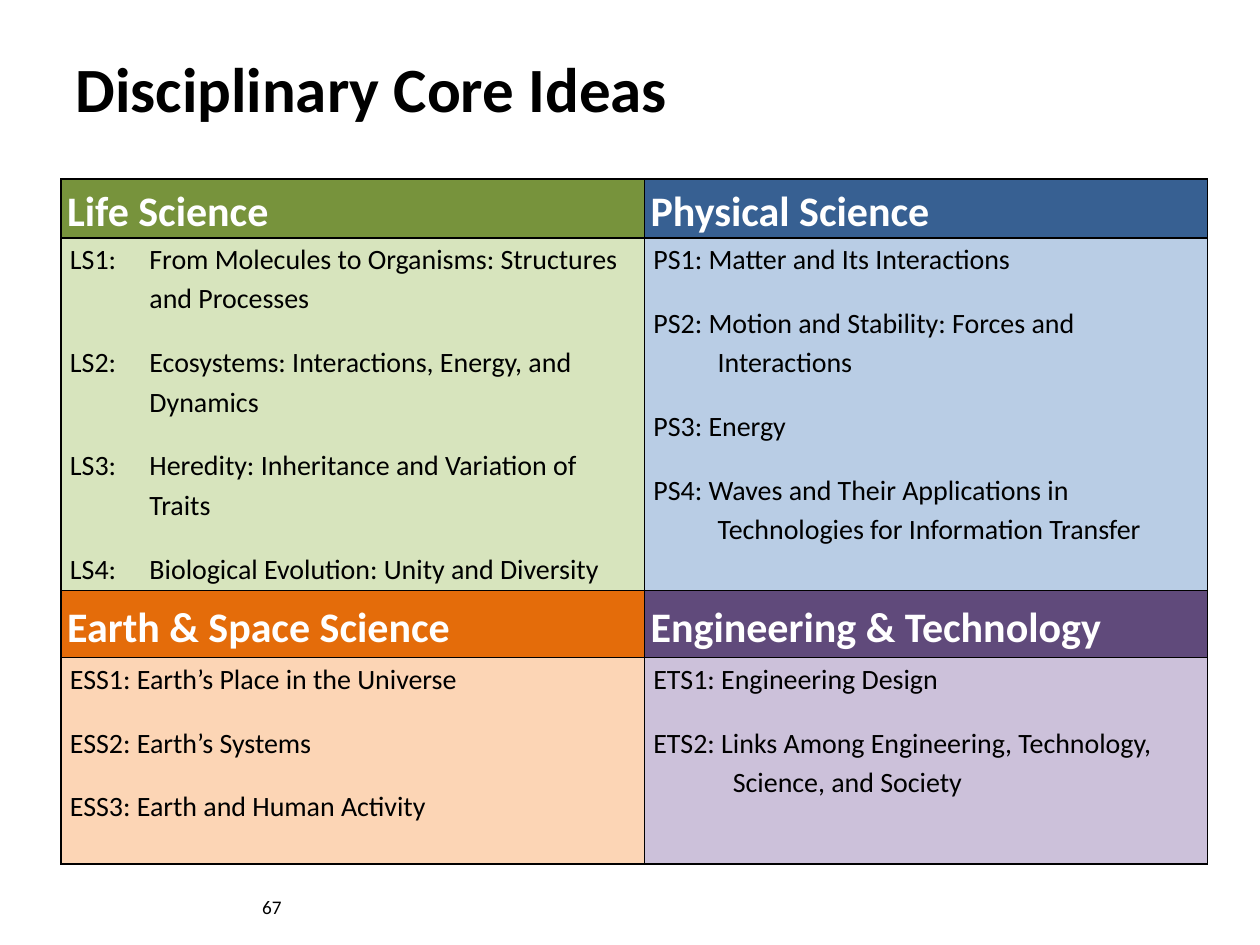
"""Build the slide of disciplinary core ideas as a four-part table."""
import dataclasses
import typing

import pptx
import pptx.dml.color
import pptx.enum.text
import pptx.oxml
import pptx.oxml.ns
import pptx.util

Pt = pptx.util.Pt
Anchor = pptx.enum.text.MSO_ANCHOR
Align = pptx.enum.text.PP_ALIGN

HUES = {
    "black": "000000", "white": "FFFFFF",
    "life": "77933C", "life pale": "D7E4BD",
    "phys": "376092", "phys pale": "B9CDE5",
    "earth": "E46C0A", "earth pale": "FCD5B5",
    "tech": "604A7B", "tech pale": "CCC1DA",
}
FONTS = {
    "title": {"name": "Calibri", "size": Pt(36), "bold": True},
    "head": {"name": "Calibri", "size": Pt(24), "bold": True},
    "item": {"name": "Calibri", "size": Pt(16), "bold": False},
    "page": {"name": "Calibri", "size": Pt(11), "bold": False},
}
HEAD = {"vertical_anchor": Anchor.MIDDLE, "margin_left": Pt(3.6),
        "margin_right": Pt(3.6), "margin_top": 0, "margin_bottom": 0}
BODY = {**HEAD, "vertical_anchor": Anchor.TOP,
        "margin_left": Pt(5.2), "margin_right": Pt(5.2)}
COLS = (333.4, 321.8)
ROWS = (33.1, 201.6, 38.2, 118.1)


@dataclasses.dataclass
class Topic:
    """A field of science with its core ideas."""
    row: int
    col: int
    hue: str
    head: str
    hang: float
    items: list[str]


TOPICS = [
    Topic(0, 0, "life", "Life Science", 45.4, [
        "LS1:\tFrom Molecules to Organisms: Structures and Processes",
        "LS2:\tEcosystems: Interactions, Energy, and Dynamics",
        "LS3:\tHeredity: Inheritance and Variation of Traits",
        "LS4:\tBiological Evolution: Unity and Diversity"]),
    Topic(0, 1, "phys", "Physical Science", 36.7, [
        "PS1: Matter and Its Interactions",
        "PS2: Motion and Stability: Forces and Interactions",
        "PS3: Energy",
        "PS4: Waves and Their Applications in Technologies for "
        "Information Transfer"]),
    Topic(2, 0, "earth", "Earth & Space Science", 30.2, [
        "ESS1: Earth’s Place in the Universe",
        "ESS2: Earth’s Systems",
        "ESS3: Earth and Human Activity"]),
    Topic(2, 1, "tech", "Engineering & Technology", 45.4, [
        "ETS1: Engineering Design",
        "ETS2: Links Among Engineering, Technology, Science, and Society"]),
]


def apply(thing: typing.Any, form: dict[str, typing.Any]) -> None:
    """Set each attribute in the dict."""
    for key, val in form.items():
        setattr(thing, key, val)


def tint(hue: str) -> pptx.dml.color.RGBColor:
    """Look up a colour."""
    return pptx.dml.color.RGBColor.from_string(HUES[hue])


def write(para: typing.Any, text: str, font: str, hue: str) -> None:
    """Put one styled run in a paragraph."""
    run = para.add_run()
    run.text = text
    apply(run.font, FONTS[font])
    run.font.color.rgb = tint(hue)


def edge(cell: typing.Any) -> None:
    """Rule all four sides of a cell."""
    props = cell._tc.get_or_add_tcPr()
    for side in "LRTB":
        props.append(pptx.oxml.parse_xml(
            f'<a:ln{side} {pptx.oxml.ns.nsdecls("a")} w="{Pt(1)}"><a:solidFill>'
            f'<a:srgbClr val="{HUES["black"]}"/></a:solidFill></a:ln{side}>'))


def fill(cell: typing.Any, lines: list[str], form: dict[str, typing.Any],
         font: str, ink: str, back: str, hang: float = 0) -> None:
    """Fill a cell with colour and lines of text."""
    edge(cell)
    apply(cell, form)
    cell.fill.solid()
    cell.fill.fore_color.rgb = tint(back)
    for num, line in enumerate(lines):
        para = cell.text_frame.add_paragraph() if num else cell.text_frame.paragraphs[0]
        para.line_spacing = 1.15
        if num:
            para.space_before = Pt(14)
        if hang:
            apply_hang = para._p.get_or_add_pPr()
            apply_hang.set("marL", str(Pt(hang)))
            apply_hang.set("indent", str(-Pt(hang)))
        write(para, line, font, ink)


def label(shape: typing.Any, text: str, font: str, align: Align) -> None:
    """Write one line in a shape."""
    frame = shape.text_frame
    apply(frame, {"word_wrap": True, "vertical_anchor": Anchor.MIDDLE})
    para = frame.paragraphs[0]
    para.alignment = align
    write(para, text, font, "black")


def main() -> None:
    """Build and save the slide."""
    deck = pptx.Presentation()
    apply(deck, {"slide_width": Pt(720), "slide_height": Pt(540)})
    slide = deck.slides.add_slide(deck.slide_layouts[5])

    title = slide.shapes.title
    apply(title, {"left": Pt(36), "top": Pt(21.6),
                  "width": Pt(528), "height": Pt(56.2)})
    label(title, "Disciplinary Core Ideas", "title", Align.LEFT)

    grid = slide.shapes.add_table(len(ROWS), len(COLS), Pt(34.8), Pt(102.2),
                                  Pt(sum(COLS)), Pt(sum(ROWS))).table
    apply(grid, {"first_row": False, "horz_banding": False})
    for col, wide in zip(grid.columns, COLS):
        col.width = Pt(wide)
    for row, high in zip(grid.rows, ROWS):
        row.height = Pt(high)
    for topic in TOPICS:
        fill(grid.cell(topic.row, topic.col), [topic.head], HEAD,
             "head", "white", topic.hue)
        fill(grid.cell(topic.row + 1, topic.col), topic.items, BODY,
             "item", "black", f"{topic.hue} pale", topic.hang)

    page = slide.shapes.add_textbox(0, Pt(504), Pt(168), Pt(28.8))
    label(page, "67", "page", Align.RIGHT)
    deck.save("out.pptx")


if __name__ == "__main__":
    main()
